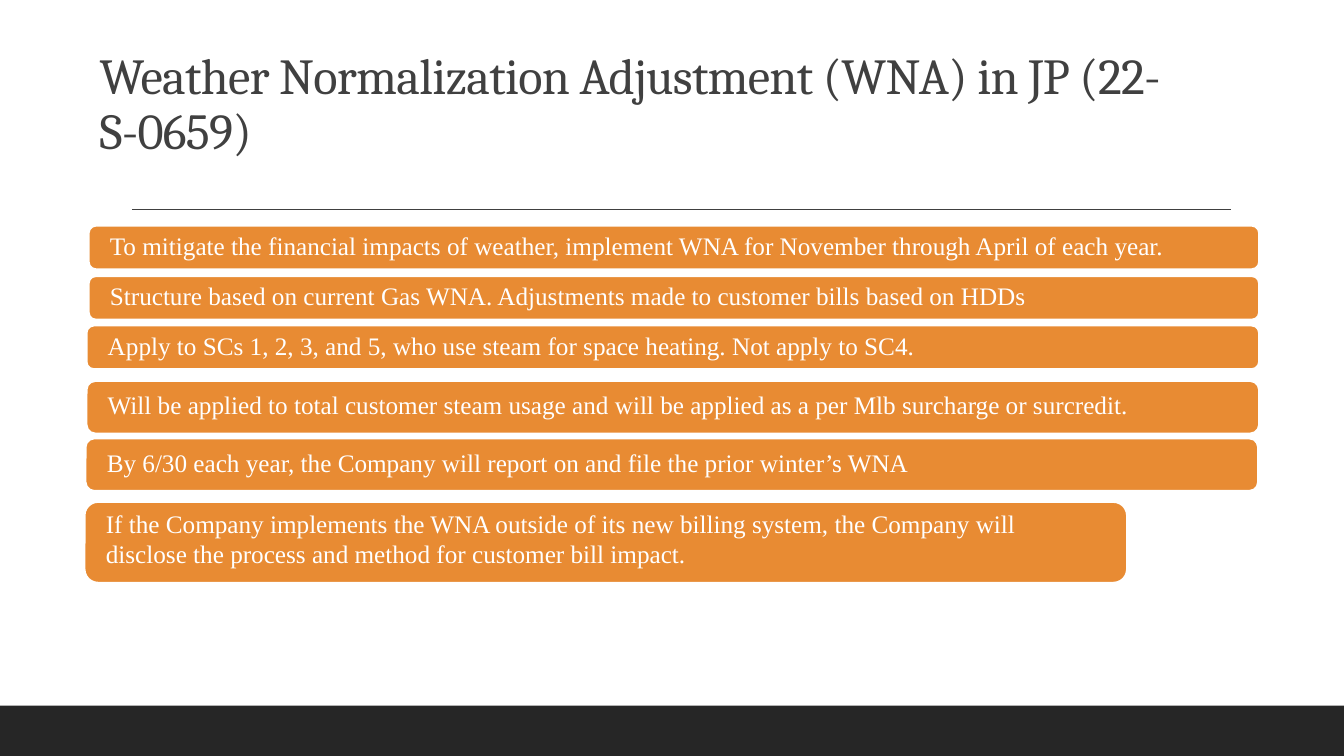
import pptx
import pptx.dml.color
import pptx.enum.shapes
import pptx.enum.text
import pptx.oxml.ns
import pptx.util
from lxml import etree

Pt = pptx.util.Pt
Anchor = pptx.enum.text.MSO_ANCHOR
Preset = pptx.enum.shapes.MSO_SHAPE

DARK, GREY, ORANGE, WHITE = "262626", "404040", "E88B33", "FFFFFF"

BARS = [
    ("To mitigate the financial impacts of weather, implement WNA for November through April of each year.",
     63.4, 161.3, 835.9, 31),
    ("Structure based on current Gas WNA. Adjustments made to customer bills based on HDDs",
     63.4, 197.3, 835.9, 31),
    ("Apply to SCs 1, 2, 3, and 5, who use steam for space heating. Not apply to SC4.",
     61.9, 232.6, 837.4, 31),
    ("Will be applied to total customer steam usage and will be applied as a per Mlb surcharge or surcredit.",
     61.9, 272.2, 837.4, 37.4),
    ("By 6/30 each year, the Company will report on and file the prior winter’s WNA",
     61.2, 313.2, 837.4, 37.4),
    ("If the Company implements the WNA outside of its new billing system, the Company will "
     "disclose the process and method for customer bill impact.",
     60.5, 358.6, 744.5, 57.6),
]


def color(value):
    """Return the colour for a hex string."""
    return pptx.dml.color.RGBColor.from_string(value)


def add_block(page, preset, left, top, width, height, fill, line=None):
    """Add a filled shape, outlined only when a line colour is given."""
    block = page.shapes.add_shape(preset, Pt(left), Pt(top), Pt(width), Pt(height))
    block.shadow.inherit = False
    block.fill.solid()
    block.fill.fore_color.rgb = color(fill)
    if line:
        block.line.color.rgb = color(line)
        block.line.width = Pt(1.25)
    else:
        block.line.fill.background()


def add_rule(page, left, top, right):
    """Add the thin horizontal line under the title."""
    rule = page.shapes.add_connector(
        pptx.enum.shapes.MSO_CONNECTOR.STRAIGHT, Pt(left), Pt(top), Pt(right), Pt(top))
    rule.line.color.rgb = color(GREY)
    rule.line.width = Pt(1)
    etree.SubElement(rule._element.spPr, pptx.oxml.ns.qn("a:effectLst"))


def add_text(page, text, left, top, width, height, *, font, size, fill,
             anchor=Anchor.MIDDLE, side=7.2, edge=3.6, leading=None, tracking=None):
    """Add a wrapped text box with one formatted paragraph."""
    box = page.shapes.add_textbox(Pt(left), Pt(top), Pt(width), Pt(height))
    frame = box.text_frame
    frame.word_wrap = True
    frame.vertical_anchor = anchor
    frame.margin_left = frame.margin_right = Pt(side)
    frame.margin_top = frame.margin_bottom = Pt(edge)
    para = frame.paragraphs[0]
    if leading:
        para.line_spacing = leading
    span = para.add_run()
    span.text = text
    span.font.name = font
    span.font.size = Pt(size)
    span.font.color.rgb = color(fill)
    if tracking:
        span._r.get_or_add_rPr().set("spc", str(round(tracking * 100)))


def add_bar(page, text, left, top, width, height):
    """Add a rounded orange bar with its statement."""
    add_block(page, Preset.ROUNDED_RECTANGLE, left, top, width, height, ORANGE, WHITE)
    add_text(page, text, left - 5.8, top, width - 9, height * 0.9,
             font="Times New Roman", size=18, fill=WHITE, side=20.9, edge=0)


def main():
    """Build the slide and save the deck."""
    deck = pptx.Presentation()
    deck.slide_width, deck.slide_height = Pt(960), Pt(540)
    page = deck.slides.add_slide(deck.slide_layouts[6])
    add_block(page, Preset.RECTANGLE, 0, 504, 960, 36, DARK)
    add_rule(page, 94.3, 149.5, 879)
    add_text(page, "Weather Normalization Adjustment (WNA) in JP (22-S-0659)",
             64.1, 57.6, 835.9, 60.5, font="Cambria", size=36, fill=GREY,
             anchor=Anchor.BOTTOM, leading=0.9, tracking=-0.5)
    for bar in BARS:
        add_bar(page, *bar)
    deck.save("out.pptx")


if __name__ == "__main__":
    main()
